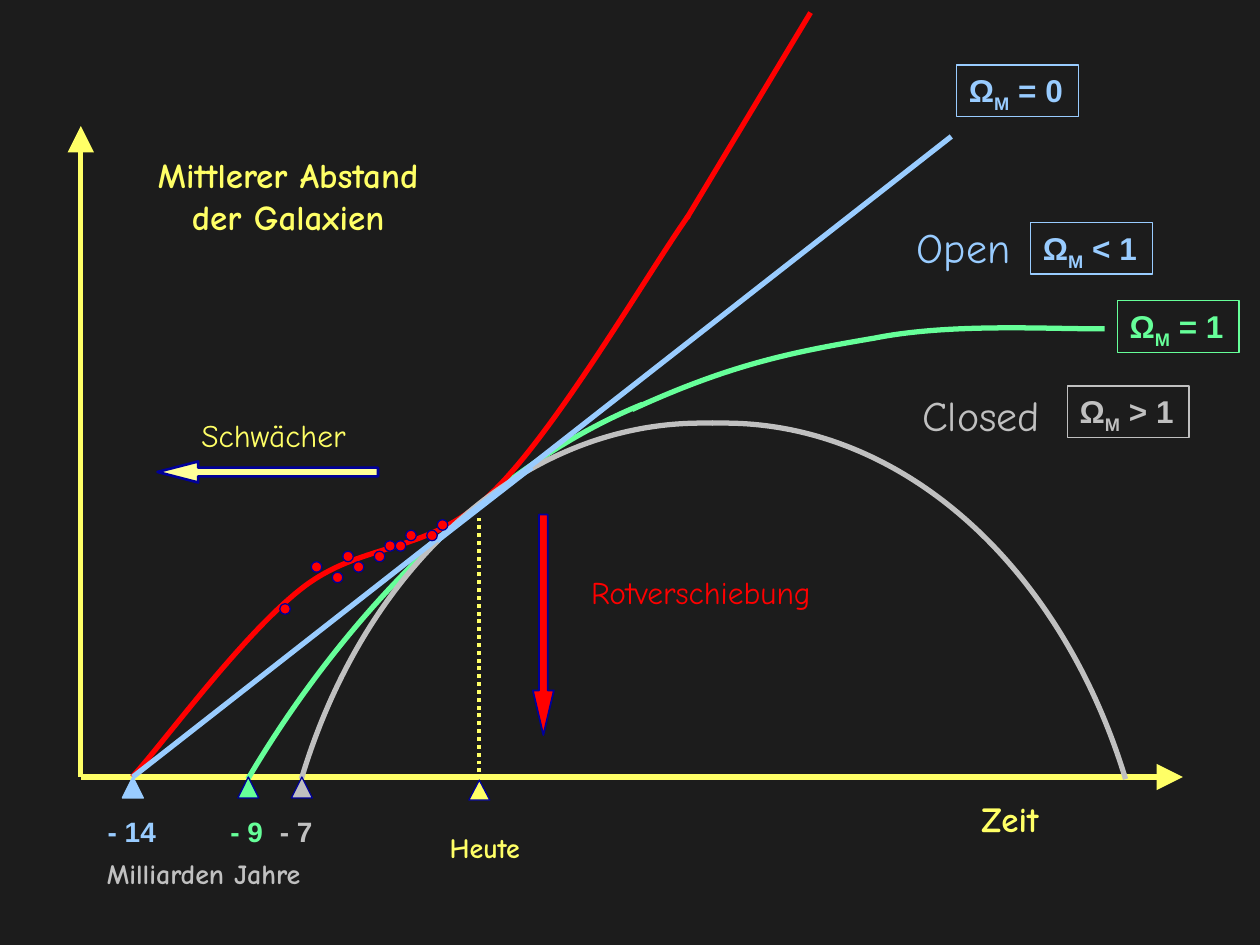
from lxml.etree import SubElement as Sub
from pptx import Presentation
from pptx.dml.color import RGBColor as RGB
from pptx.enum.dml import MSO_LINE as DASH
from pptx.enum.shapes import MSO_CONNECTOR as CONN, MSO_SHAPE as SHAPE
from pptx.enum.text import MSO_ANCHOR as ANCHOR, PP_ALIGN as ALIGN
from pptx.oxml.ns import qn
from pptx.util import Inches, Pt

C = {"bg": "1C1C1C", "yellow": "FFFF66", "pale": "FFFF99", "navy": "000099",
     "red": "FF0000", "green": "66FF99", "grey": "C0C0C0", "blue": "99CCFF"}
COLS = 120
HAND, SANS = "Comic Neue", "Arial"

prs = Presentation()
prs.slide_width, prs.slide_height = Inches(10), Inches(7.5)
u = prs.slide_width // COLS
s = prs.slides.add_slide(prs.slide_layouts[6])
s.background.fill.solid()
s.background.fill.fore_color.rgb = RGB.from_string(C["bg"])


def style(sp, line, width, fill=None):
    sp.line.color.rgb = RGB.from_string(C[line])
    sp.line.width = Pt(width)
    if hasattr(sp, "fill"):
        sp.shadow.inherit = False
        if fill:
            sp.fill.solid()
            sp.fill.fore_color.rgb = RGB.from_string(C[fill])
        else:
            sp.fill.background()
    else:
        Sub(sp._element.spPr, qn("a:effectLst"))


def write(sp, runs, color, size, name, bold, align=ALIGN.LEFT, wrap=False):
    tf = sp.text_frame
    for key, value in {"word_wrap": wrap, "vertical_anchor": ANCHOR.TOP}.items():
        setattr(tf, key, value)
    p = tf.paragraphs[0]
    p.alignment = align
    for i, text in enumerate(runs):
        r = p.add_run()
        r.text = text
        for key, value in {"size": Pt(size), "name": name, "bold": bold}.items():
            setattr(r.font, key, value)
        r.font.color.rgb = RGB.from_string(C[color])
        if i == 1:
            r.font._element.set("baseline", "-25000")


base, origin, today = 74, 7.7, 45.65

strokes = [
    ("yellow", 3, "arrow", [(origin, base), (origin, 12)]),
    ("yellow", 3, "arrow", [(origin, base), (112.65, base)]),
    ("yellow", 2.25, "dots", [(today, 74.3), (today, 49)]),
    ("green", 3, "curve", [(60.2, 39), (69.8, 34.6), (75.7, 33.5), (83.3, 32.2),
                           (90.8, 30.7), (100.7, 31.4), (105.2, 31.3)]),
    ("green", 3, "curve", [(61.2, 38.5), (47.8, 43.9), (33.7, 57.1), (23.6, 74.2)]),
    ("red", 3, "curve", [(12.6, base), (15.4, 71), (23, 60.5), (28.8, 56),
                         (34.6, 51.5), (40.8, 52.9), (46.9, 46.9),
                         (53, 41), (61.7, 26), (65.6, 20.5)]),
    ("red", 3, "line", [(65.4, 20.8), (77.2, 1.2)]),
    ("grey", 3, "curve", [(67.9, 40.3), (67.6, 40.3), (67.2, 40.3), (66.8, 40.3),
                          (49.9, 40.3), (34.8, 53.8), (28.7, 74.2)]),
    ("grey", 3, "curve", [(67.8, 40.3), (68.2, 40.3), (68.6, 40.3), (69, 40.3),
                          (85.9, 40.3), (101, 53.8), (107.2, 74.2)]),
    ("blue", 3, "line", [(12.65, base), (90.6, 13)]),
    ("blue", 3, "line", [(41.65, 51.5), (50.65, 44.5)]),
]
for color, width, kind, pts in strokes:
    pts = [(round(x * u), round(y * u)) for x, y in pts]
    if kind == "curve":
        fb = s.shapes.build_freeform(*pts[0])
        fb.add_line_segments(pts[1:], close=False)
        sp = fb.convert_to_shape()
        path = sp._element.find(".//" + qn("a:path"))
        segments = path.findall(qn("a:lnTo"))
        for i in range(0, len(segments), 3):
            bezier = Sub(path, qn("a:cubicBezTo"))
            for segment in segments[i:i + 3]:
                bezier.append(segment[0])
                path.remove(segment)
    else:
        sp = s.shapes.add_connector(CONN.STRAIGHT, *pts[0], *pts[1])
    style(sp, color, width)
    if kind == "dots":
        sp.line.dash_style = DASH.ROUND_DOT
    elif kind == "arrow":
        Sub(sp.line._get_or_add_ln(), qn("a:tailEnd"), type="triangle", w="lg", len="lg")

shapes = [
    (SHAPE.LEFT_ARROW, 15, 43.95, 21, 2, "pale", "navy", 1.5, (0.417, 1.938)),
    (SHAPE.DOWN_ARROW, 50.75, 49, 2, 21, "red", "navy", 1, (0.417, 2.125)),
    (SHAPE.ISOSCELES_TRIANGLE, today - 1, 74.3, 2, 1.9, "yellow", "navy", 0.75, ()),
]
for x, fill, edge in [(11.65, "blue", "blue"), (22.65, "green", "navy"), (27.75, "grey", "navy")]:
    shapes.append((SHAPE.ISOSCELES_TRIANGLE, x, base, 2, 2, fill, edge, 0.75, ()))

dots = [(0, 0), (3, 4), (5, 3), (6, 5), (7, 4), (9, 5),
        (10, 6), (11, 6), (12, 7), (14, 7), (15, 8)]
for col, row in dots:
    shapes.append((SHAPE.OVAL, 26.65 + col, 57.5 - row, 1, 1, "red", "navy", 0.75, ()))

for kind, x, y, w, h, fill, edge, width, adj in shapes:
    sp = s.shapes.add_shape(kind, *(round(v * u) for v in (x, y, w, h)))
    style(sp, edge, width, fill)
    for i, value in enumerate(adj):
        sp.adjustments[i] = value

omegas = [(91.1, 6.2, " = 0", "blue"), (98.15, 21.2, " < 1", "blue"),
          (106.4, 28.65, " = 1", "green"), (101.65, 36.75, " > 1", "grey")]
for x, y, relation, color in omegas:
    sp = s.shapes.add_shape(SHAPE.RECTANGLE, *(round(v * u) for v in (x, y, 11.6, 4.9)))
    style(sp, color, 0.75)
    write(sp, ["Ω", "M", relation], color, 18, SANS, True)

L, M = ALIGN.LEFT, ALIGN.CENTER
labels = [
    (11, 14, 32.9, 9.2, "Mittlerer Abstand der Galaxien", "yellow", 20, HAND, True, M, True),
    (41.65, 78.5, 10.1, 4.4, "Heute", "yellow", 16, HAND, True, L, False),
    (18, 39, 17.8, 4.8, "Schwächer", "yellow", 18, HAND, False, L, False),
    (53.95, 54, 25.6, 4.8, "Rotverschiebung", "red", 18, HAND, False, M, False),
    (91.65, 75.35, 9.1, 5.2, "Zeit", "yellow", 20, HAND, True, M, True),
    (86.65, 36.5, 14.5, 6, "Closed", "grey", 24, HAND, False, L, False),
    (86.15, 20.5, 12, 6, "Open", "blue", 24, HAND, False, L, False),
    (9, 77, 7.1, 4.4, "- 14", "blue", 16, SANS, True, M, True),
    (20.75, 77, 5.5, 4.4, "- 9", "green", 16, SANS, True, M, True),
    (25.45, 77, 5.5, 4.4, "- 7", "grey", 16, SANS, True, M, True),
    (9, 81, 23.8, 4.4, "Milliarden Jahre", "grey", 16, HAND, True, L, True),
]
for x, y, w, h, text, *fmt in labels:
    sp = s.shapes.add_textbox(*(round(v * u) for v in (x, y, w, h)))
    write(sp, [text], *fmt)

prs.save("out.pptx")
